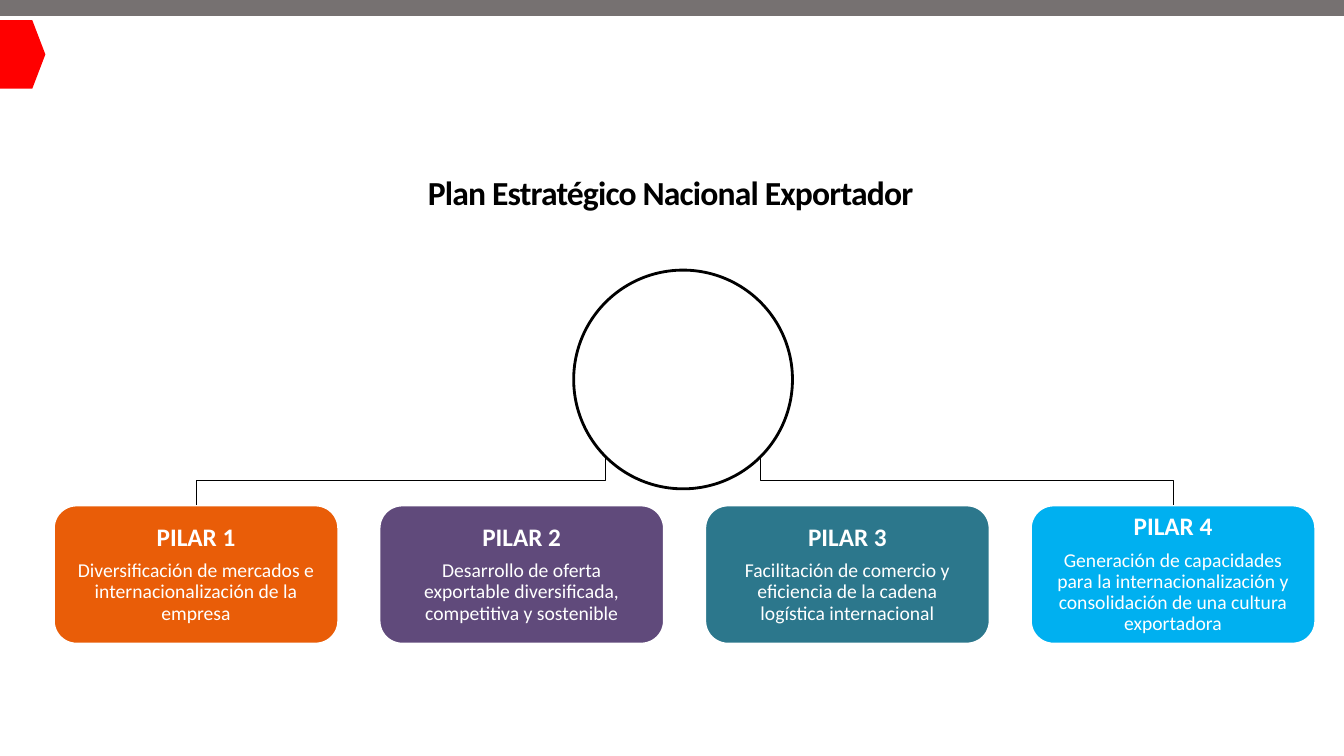
from lxml.etree import SubElement
from pptx import Presentation
from pptx.dml.color import RGBColor
from pptx.enum.shapes import MSO_CONNECTOR, MSO_SHAPE
from pptx.enum.text import MSO_ANCHOR, PP_ALIGN
from pptx.oxml.ns import qn
from pptx.util import Inches, Pt

THEME = {
    "font": "Calibri",
    "black": "000000", "white": "FFFFFF", "gray": "767171", "red": "FF0000",
    "title_size": 24, "heading_size": 18, "body_size": 14,
    "pillar_colors": ["E95D08", "604A7B", "2C778C", "00B0F0"],
}
PILLARS = [
    "Diversificación de mercados e internacionalización de la empresa",
    "Desarrollo de oferta exportable diversificada, competitiva y sostenible",
    "Facilitación de comercio y eficiencia de la cadena logística internacional",
    "Generación de capacidades para la internacionalización y consolidación de una cultura exportadora",
]


def add_box(kind, left, top, width, height, fill=None, line=None, weight=1):
    box = slide.shapes.add_shape(kind, Inches(left), Inches(top), Inches(width), Inches(height))
    box.shadow.inherit = False
    for part, color in ((box.fill, fill), (box.line.fill, line)):
        if color:
            part.solid()
            part.fore_color.rgb = RGBColor.from_string(color)
        else:
            part.background()
    if line:
        box.line.width = Pt(weight)
    return box


def style_text(para, size, color, bold):
    para.alignment = PP_ALIGN.CENTER
    para.line_spacing = 0.9
    para.font.name = THEME["font"]
    para.font.size = Pt(size)
    para.font.bold = bold
    para.font.color.rgb = RGBColor.from_string(color)


deck = Presentation()
deck.slide_width = Inches(13.33)
deck.slide_height = Inches(7.5)
slide = deck.slides.add_slide(deck.slide_layouts[6])

title = slide.shapes.add_textbox(Inches(3.98), Inches(1.55), Inches(5.34), Inches(0.77))
title.text_frame.word_wrap = True
title.text_frame.vertical_anchor = MSO_ANCHOR.MIDDLE
para = title.text_frame.paragraphs[0]
span = para.add_run()
span.text = "Plan Estratégico Nacional Exportador"
span.font._element.set("spc", "-60")
style_text(para, THEME["title_size"], THEME["black"], True)

add_box(MSO_SHAPE.OVAL, 5.69, 2.68, 2.17, 2.17, line=THEME["black"], weight=2)

for index, (body, color) in enumerate(zip(PILLARS, THEME["pillar_colors"])):
    pillar = add_box(MSO_SHAPE.ROUNDED_RECTANGLE, 0.53 + 3.23 * index, 5.01, 2.83, 1.38,
                     color, THEME["white"], 2)
    frame = pillar.text_frame
    frame.word_wrap = True
    frame.vertical_anchor = MSO_ANCHOR.MIDDLE
    frame.margin_left = frame.margin_right = Inches(0.14)
    frame.margin_top = frame.margin_bottom = 0
    heading, detail = frame.paragraphs[0], frame.add_paragraph()
    heading.text = f"PILAR {index + 1}"
    detail.text = body
    style_text(heading, THEME["heading_size"], THEME["white"], True)
    style_text(detail, THEME["body_size"], THEME["white"], False)
    heading.space_after = Pt(6.3)

pillar_top, circle_edge = 5.01, 4.53
middle = (pillar_top + circle_edge) / 2
rise = (pillar_top - circle_edge) / 2
for pillar_x, circle_x, turn in ((1.95, 6.01, 90), (11.64, 7.54, 270)):
    center = (pillar_x + circle_x) / 2
    reach = abs(pillar_x - circle_x) / 2
    side = rise if turn == 90 else -rise
    link = slide.shapes.add_connector(
        MSO_CONNECTOR.ELBOW, Inches(center + side), Inches(middle + reach),
        Inches(center - side), Inches(middle - reach))
    link.line.color.rgb = RGBColor.from_string(THEME["black"])
    link.line.width = Pt(0.75)
    properties = link._element.spPr
    properties.find(qn("a:xfrm")).set("rot", str(turn * 60000))
    SubElement(properties, qn("a:effectLst"))

add_box(MSO_SHAPE.RECTANGLE, 0, 0, 13.33, 0.15, THEME["gray"], THEME["gray"])
marker = add_box(MSO_SHAPE.PENTAGON, 0, 0.2, 0.45, 0.68, THEME["red"])
marker.adjustments[0] = 0.288

deck.save("out.pptx")
